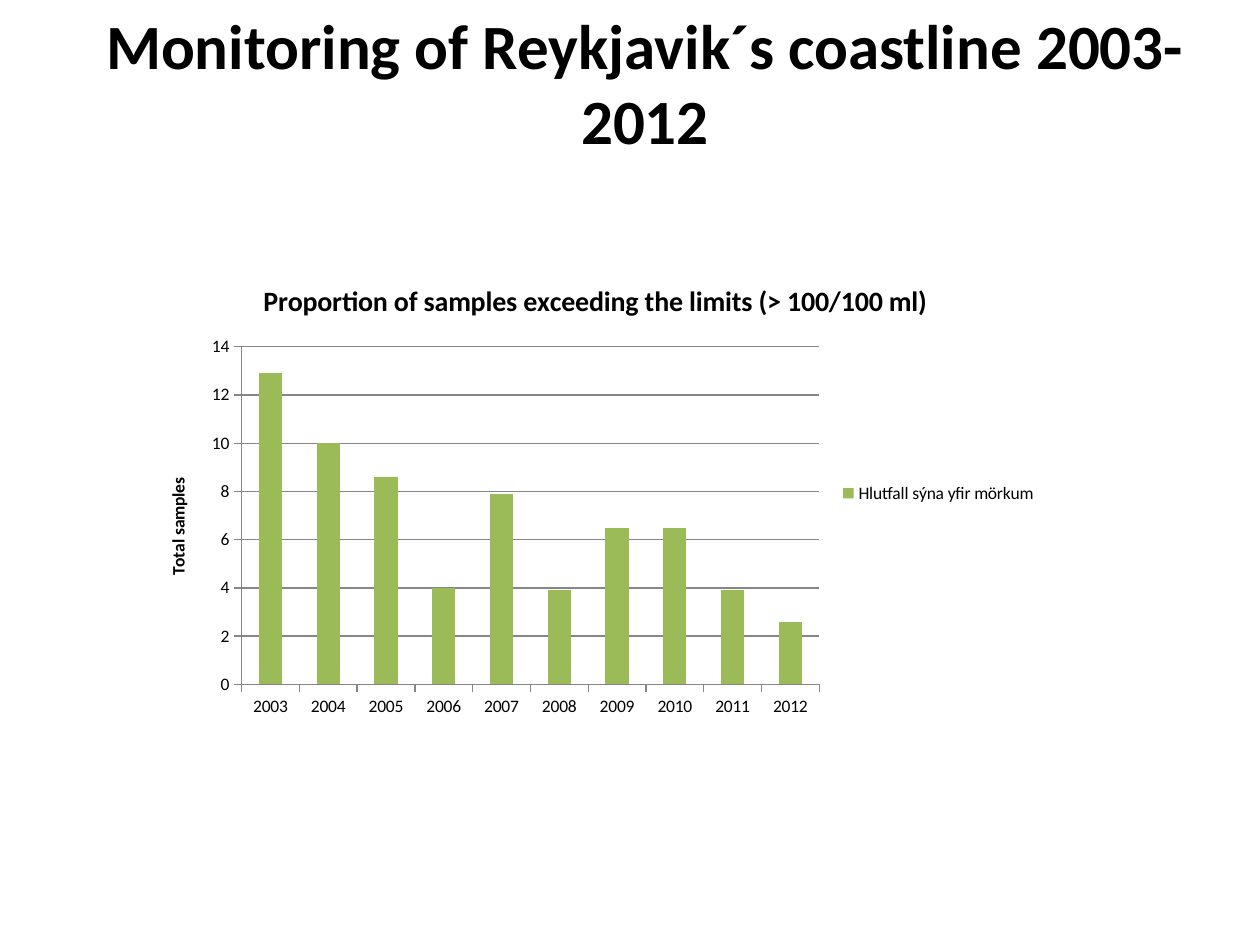
from pptx import Presentation
from pptx.chart.data import CategoryChartData
from pptx.dml.color import RGBColor
from pptx.enum.chart import XL_CHART_TYPE, XL_LEGEND_POSITION, XL_TICK_MARK
from pptx.enum.text import MSO_ANCHOR, PP_ALIGN
from pptx.util import Inches, Pt

COLUMNS = XL_CHART_TYPE.COLUMN_CLUSTERED
LEGEND_RIGHT = XL_LEGEND_POSITION.RIGHT
TICK_OUTSIDE = XL_TICK_MARK.OUTSIDE
CENTER = PP_ALIGN.CENTER
TOP = MSO_ANCHOR.TOP

BLACK = RGBColor(0x00, 0x00, 0x00)
GREEN = RGBColor(0x9B, 0xBB, 0x59)
GRAY = RGBColor(0x86, 0x86, 0x86)
FONT = "Calibri"
SLIDE_WIDTH = Inches(10)
SLIDE_HEIGHT = Inches(7.5)

YEARS = [str(year) for year in range(2003, 2013)]
EXCEEDING = [12.9, 10, 8.6, 4, 7.9, 3.9, 6.5, 6.5, 3.9, 2.6]


def share(left, top, width, height):
    return (
        int(SLIDE_WIDTH * left),
        int(SLIDE_HEIGHT * top),
        int(SLIDE_WIDTH * width),
        int(SLIDE_HEIGHT * height),
    )


def style_font(font, size, bold=False):
    font.name = FONT
    font.size = Pt(size)
    font.bold = bold
    font.color.rgb = BLACK


def add_heading(slide, wording, area):
    frame = slide.shapes.add_textbox(*area).text_frame
    frame.word_wrap = True
    frame.vertical_anchor = TOP
    frame.text = wording
    heading = frame.paragraphs[0]
    heading.alignment = CENTER
    style_font(heading.runs[0].font, 36, bold=True)


def set_title(titled, wording, size):
    frame = titled.text_frame
    frame.text = wording
    style_font(frame.paragraphs[0].runs[0].font, size, bold=True)


def style_axis(axis):
    axis.major_tick_mark = TICK_OUTSIDE
    axis.format.line.color.rgb = GRAY
    style_font(axis.tick_labels.font, 10)


def add_sample_chart(slide, area):
    samples = CategoryChartData()
    samples.categories = YEARS
    samples.add_series("Hlutfall sýna yfir mörkum", EXCEEDING)
    chart = slide.shapes.add_chart(COLUMNS, *area, samples).chart
    style_font(chart.font, 10)

    chart.has_title = True
    set_title(chart.chart_title,
              "Proportion of samples exceeding the limits (> 100/100 ml)", 16)
    chart.chart_title.include_in_layout = False
    chart.has_legend = True
    chart.legend.position = LEGEND_RIGHT
    chart.legend.include_in_layout = False
    style_font(chart.legend.font, 10)

    for axis in (chart.category_axis, chart.value_axis):
        style_axis(axis)
    totals = chart.value_axis
    totals.minimum_scale = 0
    totals.maximum_scale = 14
    totals.major_unit = 2
    totals.has_major_gridlines = True
    totals.major_gridlines.format.line.color.rgb = GRAY
    set_title(totals.axis_title, "Total samples", 10)

    plot = chart.plots[0]
    plot.gap_width = 150
    plot.vary_by_categories = False
    bars = plot.series[0].format.fill
    bars.solid()
    bars.fore_color.rgb = GREEN


def main():
    deck = Presentation()
    deck.slide_width = SLIDE_WIDTH
    deck.slide_height = SLIDE_HEIGHT
    slide = deck.slides.add_slide(deck.slide_layouts[6])
    add_heading(slide, "Monitoring of Reykjavik´s coastline 2003-2012",
                share(0.067, 0, 0.89, 0.175))
    add_sample_chart(slide, share(0.112, 0.276, 0.721, 0.492))
    deck.save("out.pptx")


if __name__ == "__main__":
    main()
